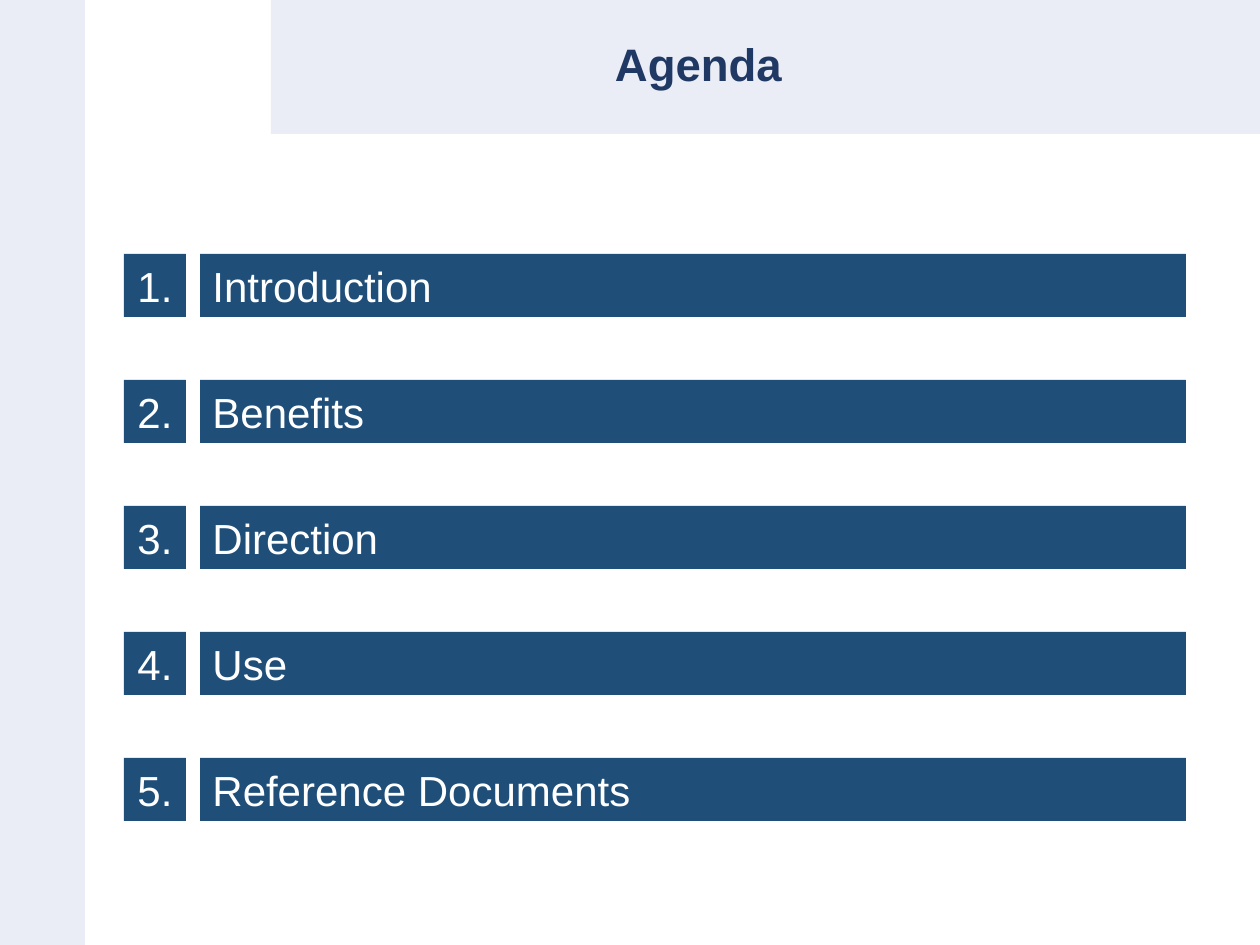
from pptx import Presentation
from pptx import util as u
from pptx.dml.color import RGBColor
from pptx.enum import shapes, text

PX = u.Inches(1) / 126
WIDTH, HEIGHT = 1260, 945


def px(length):
    return u.Emu(round(length * PX))


def colour(value):
    return RGBColor.from_string(value)


class AgendaPage:
    """Holds the style and the current slide."""
    font = "Arial"
    pale, navy, blue, white = "EAEDF6", "203864", "1F4E79", "FFFFFF"

    def __init__(self, deck):
        self.page = deck.slides.add_slide(deck.slide_layouts[5])

    def label(self, shape, words, size, ink, align, bold=False):
        frame = shape.text_frame
        frame.word_wrap = True
        frame.auto_size = text.MSO_AUTO_SIZE.NONE
        frame.vertical_anchor = text.MSO_ANCHOR.MIDDLE
        para = frame.paragraphs[0]
        para.alignment = align
        span = para.add_run()
        span.text = words
        span.font.name = self.font
        span.font.size = u.Pt(size)
        span.font.bold = bold
        span.font.color.rgb = colour(ink)
        return para

    def box(self, left, top, width, height, fill):
        box = self.page.shapes.add_shape(
            shapes.MSO_SHAPE.RECTANGLE, px(left), px(top), px(width), px(height))
        box.shadow.inherit = False
        box.fill.solid()
        box.fill.fore_color.rgb = colour(fill)
        box.line.fill.background()
        return box

    def title(self, words, left, top, width, height):
        title = self.page.shapes.title
        title.left, title.top = px(left), px(top)
        title.width, title.height = px(width), px(height)
        para = self.label(title, words, 26, self.navy, text.PP_ALIGN.CENTER, True)
        para.line_spacing = 0.9
        # Bring the title in front of the header band
        title.element.getparent().append(title.element)

    def item(self, number, words, top):
        height = 63
        bar = self.box(200, top, 986, height, self.blue)
        self.label(bar, words, 24, self.white, text.PP_ALIGN.LEFT)
        badge = self.box(124, top, 62, height, self.blue)
        self.label(badge, f"{number}.", 24, self.white, text.PP_ALIGN.CENTER)


def main():
    deck = Presentation()
    deck.slide_width, deck.slide_height = px(WIDTH), px(HEIGHT)
    agenda = AgendaPage(deck)

    # Side and header bands
    agenda.box(0, 0, 85, HEIGHT, agenda.pale)
    agenda.box(271, 0, WIDTH - 271, 134, agenda.pale)
    agenda.title("Agenda", 200, 0, 997, 134)

    # Numbered topics, evenly spaced
    topics = ["Introduction", "Benefits", "Direction", "Use", "Reference Documents"]
    for index, topic in enumerate(topics):
        agenda.item(index + 1, topic, 254 + 126 * index)

    deck.save("out.pptx")


if __name__ == "__main__":
    main()
